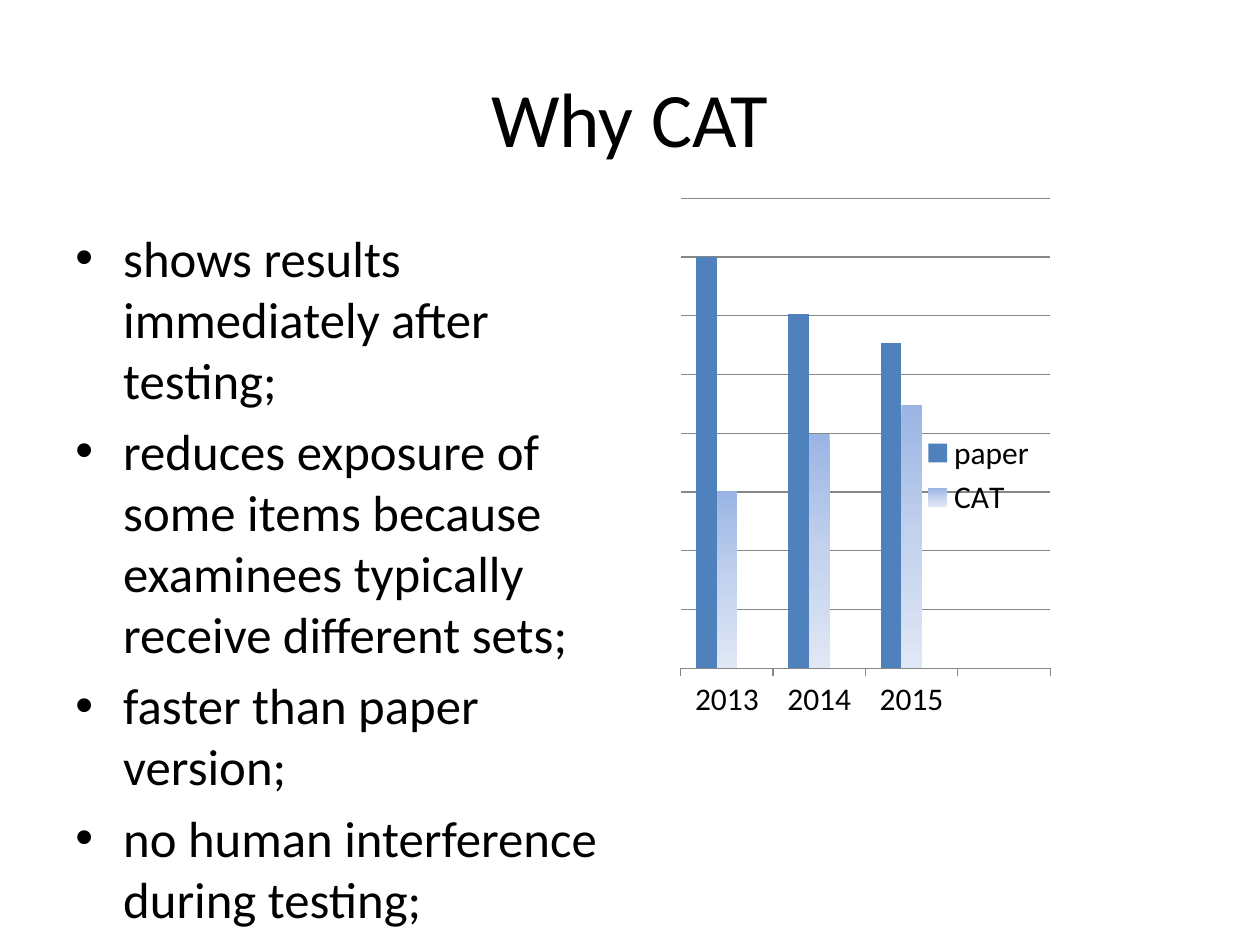
from copy import deepcopy
from dataclasses import dataclass
from typing import Optional

from lxml.etree import SubElement
from pptx import Presentation
from pptx.chart.chart import Chart
from pptx.chart.data import CategoryChartData
from pptx.dml.color import RGBColor
from pptx.enum.chart import XL_CHART_TYPE as ChartType
from pptx.enum.chart import XL_LEGEND_POSITION as LegendPosition
from pptx.enum.chart import XL_TICK_MARK as TickMark
from pptx.enum.text import MSO_ANCHOR as Anchor
from pptx.enum.text import PP_ALIGN as Align
from pptx.oxml.ns import qn
from pptx.slide import Slide
from pptx.text.text import TextFrame
from pptx.util import Inches, Pt

COLORS = {
    "text": "000000",
    "grid": "868686",
    "paper": "4F81BD",
    "CAT": "9AB5E4",
    "CAT middle": "C2D1ED",
    "CAT end": "E1E8F5",
    "Series 3": "9BBB59",
}
FONT = "Calibri"
YEARS = ["2013", "2014", "2015", ""]
GRID_STEP = 14.28
GRID_ROWS = 8
REASONS = [
    "shows results immediately after testing;",
    "reduces exposure of some items because examinees typically receive different sets;",
    "faster than paper version;",
    "no human interference during testing;",
]


@dataclass
class Box:
    left: float
    top: float
    width: float
    height: float

    def inches(self) -> list:
        return [Inches(v) for v in (self.left, self.top, self.width, self.height)]


@dataclass
class Measure:
    name: str
    values: list[Optional[int]]


MEASURES = [
    Measure("paper", [100, 86, 79, None]),
    Measure("CAT", [43, 57, 64, None]),
    Measure("Series 3", [None] * 4),
]


def color(name: str) -> RGBColor:
    return RGBColor.from_string(COLORS[name])


def style_font(font, size: float) -> None:
    font.name = FONT
    font.size = Pt(size)
    font.color.rgb = color("text")


def add_text(slide: Slide, box: Box, lines: list[str], size: float) -> TextFrame:
    frame = slide.shapes.add_textbox(*box.inches()).text_frame
    frame.word_wrap = True
    frame.text = "\n".join(lines)
    for paragraph in frame.paragraphs:
        style_font(paragraph.font, size)
    return frame


def add_bullets(frame: TextFrame) -> None:
    for paragraph in frame.paragraphs:
        paragraph.space_before = Pt(6)
        props = paragraph._p.get_or_add_pPr()
        props.set("marL", str(Inches(0.38)))
        props.set("indent", str(-Inches(0.38)))
        bullet_font = props.makeelement(qn("a:buFont"), {"typeface": "Arial"})
        bullet = props.makeelement(qn("a:buChar"), {"char": "•"})
        defaults = props.find(qn("a:defRPr"))
        defaults.addprevious(bullet_font)
        defaults.addprevious(bullet)


def place(parent, index: int, box: Box, inner: bool = False) -> None:
    for old in parent.findall(qn("c:layout")):
        parent.remove(old)
    layout = parent.makeelement(qn("c:layout"), {})
    parent.insert(index, layout)
    manual = SubElement(layout, qn("c:manualLayout"))
    settings = {"layoutTarget": "inner"} if inner else {}
    settings |= {"xMode": "edge", "yMode": "edge"}
    settings |= {"x": box.left, "y": box.top, "w": box.width, "h": box.height}
    for tag, value in settings.items():
        SubElement(manual, qn(f"c:{tag}"), val=str(value))


def fill_series(chart: Chart) -> None:
    for series in chart.plots[0].series:
        fill = series.format.fill
        if series.name != "CAT":
            fill.solid()
            fill.fore_color.rgb = color(series.name)
            continue
        fill.gradient()
        fill.gradient_angle = 270
        stops = next(series._element.iter(qn("a:gsLst")))
        stops.insert(1, deepcopy(stops[0]))
        for stop, name, position in zip(
            fill.gradient_stops, ["CAT", "CAT middle", "CAT end"], [0, 0.5, 1]
        ):
            stop.color.rgb = color(name)
            stop.position = position


def style_axes(chart: Chart) -> None:
    values = chart.value_axis
    values.visible = False
    values.minimum_scale = 0
    values.maximum_scale = GRID_STEP * GRID_ROWS
    values.major_unit = GRID_STEP
    years = chart.category_axis
    years.major_tick_mark = TickMark.OUTSIDE
    for line in (values.major_gridlines.format.line, years.format.line):
        line.color.rgb = color("grid")
        line.width = Pt(0.75)


def add_legend(chart: Chart) -> None:
    chart.has_legend = True
    chart.legend.position = LegendPosition.RIGHT
    chart.legend.include_in_layout = False
    legend = chart.legend._element
    entry = legend.makeelement(qn("c:legendEntry"), {})
    SubElement(entry, qn("c:idx"), val="2")
    SubElement(entry, qn("c:delete"), val="1")
    legend.insert(1, entry)
    place(legend, 2, Box(0.72, 0.42, 0.25, 0.17))


def add_results_chart(slide: Slide, box: Box) -> None:
    data = CategoryChartData()
    data.categories = YEARS
    for measure in MEASURES:
        data.add_series(measure.name, measure.values)
    chart = slide.shapes.add_chart(
        ChartType.COLUMN_CLUSTERED, *box.inches(), data
    ).chart
    chart.has_title = False
    style_font(chart.font, 18)
    plot = chart.plots[0]
    plot.gap_width = 150
    plot.overlap = 0
    plot.vary_by_categories = False
    fill_series(chart)
    style_axes(chart)
    add_legend(chart)
    plot_area = chart._chartSpace.chart.plotArea
    place(plot_area, 0, Box(0.2, 0.01, 0.8, 0.84), inner=True)


def main() -> None:
    deck = Presentation()
    deck.slide_width, deck.slide_height = Inches(10), Inches(7.5)
    slide = deck.slides.add_slide(deck.slide_layouts[6])
    title = add_text(slide, Box(0.5, 0.3, 9, 1.25), ["Why CAT"], 44)
    title.vertical_anchor = Anchor.MIDDLE
    title.paragraphs[0].alignment = Align.CENTER
    add_bullets(add_text(slide, Box(0.5, 1.75, 4.5, 4.95), REASONS, 29))
    add_results_chart(slide, Box(4.67, 1.53, 3.67, 4.44))
    deck.save("out.pptx")


if __name__ == "__main__":
    main()
